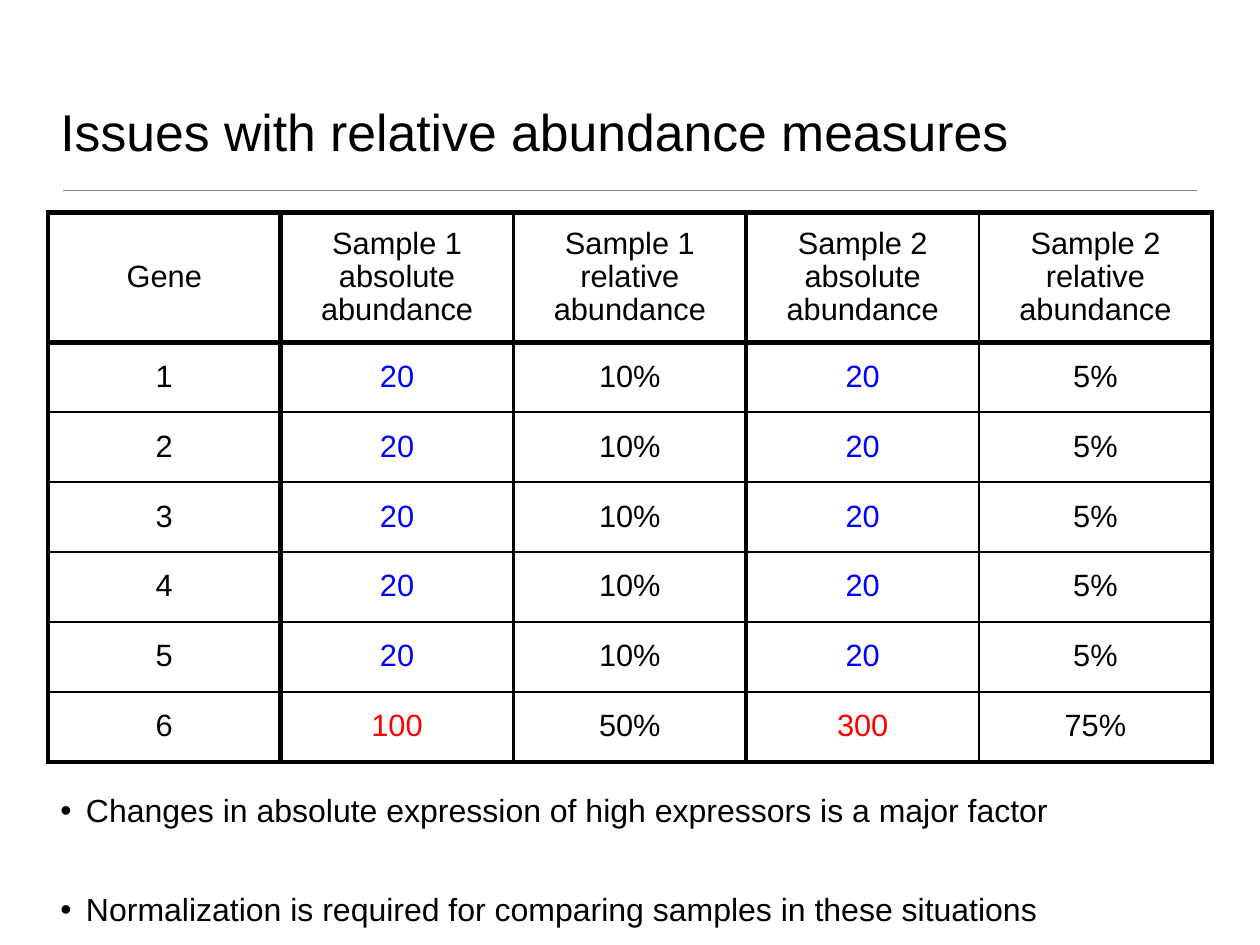
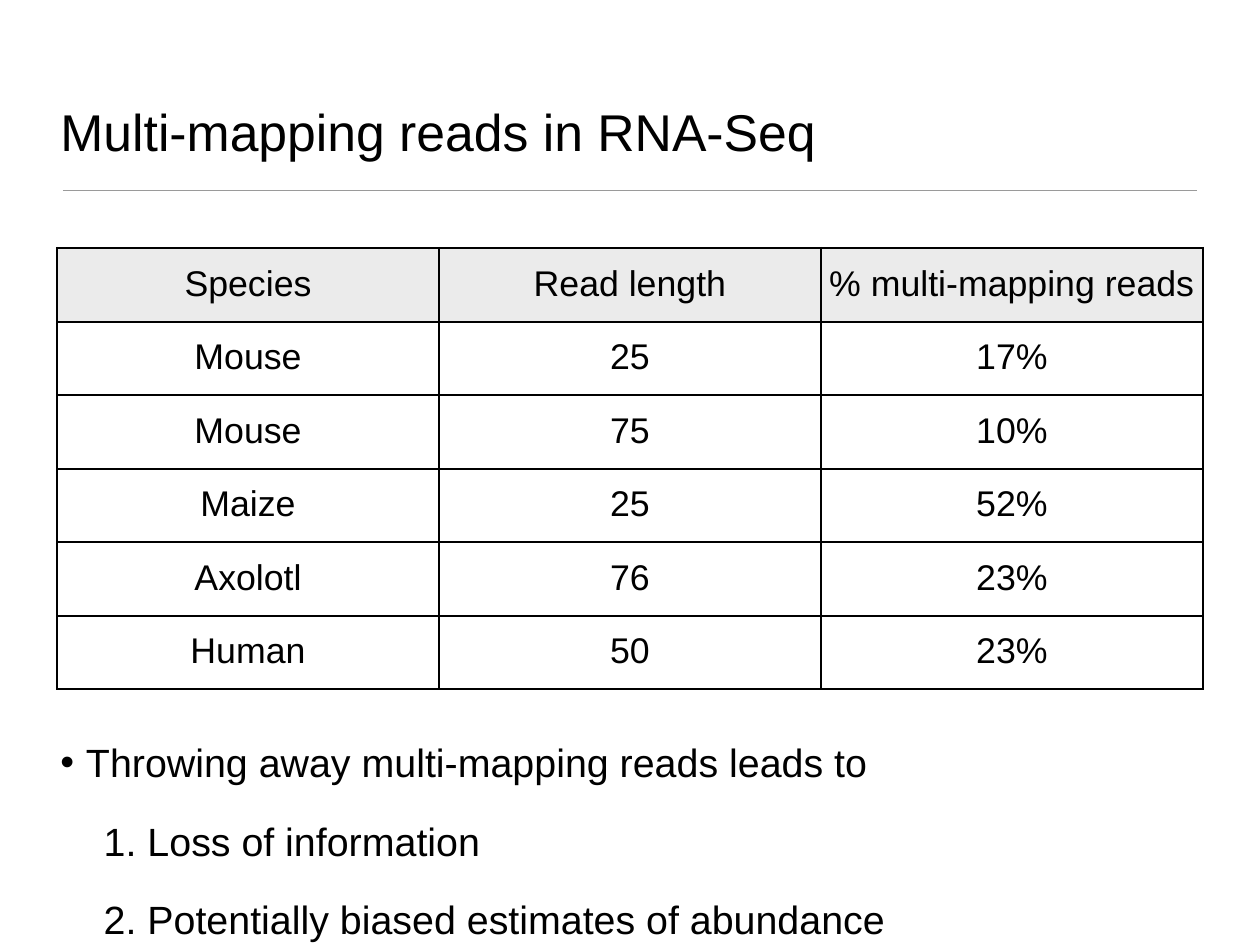
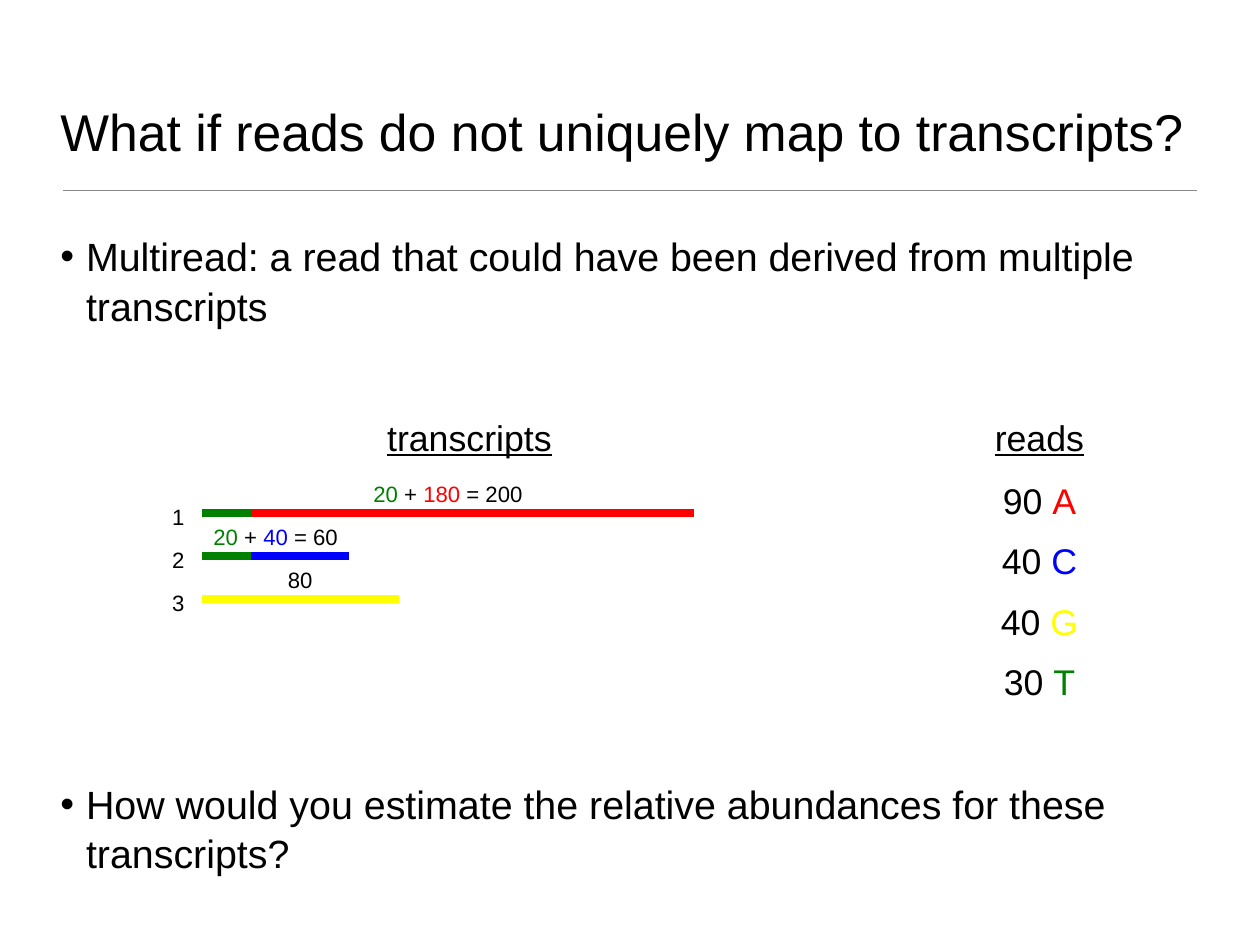
"""Build three slides on read mapping and relative abundance in RNA-Seq."""
from dataclasses import dataclass, field
from typing import NamedTuple

from lxml import etree
from pptx import Presentation
from pptx.dml.color import RGBColor
from pptx.enum.shapes import MSO_CONNECTOR
from pptx.enum.text import MSO_ANCHOR, MSO_AUTO_SIZE, PP_ALIGN
from pptx.oxml.ns import qn
from pptx.util import Emu, Pt

STRAIGHT = MSO_CONNECTOR.STRAIGHT
TOP, MIDDLE, BOTTOM = MSO_ANCHOR.TOP, MSO_ANCHOR.MIDDLE, MSO_ANCHOR.BOTTOM
LEFT, CENTER = PP_ALIGN.LEFT, PP_ALIGN.CENTER
NO_AUTOFIT = MSO_AUTO_SIZE.NONE

GRID_COLUMNS, GRID_ROWS = 128, 96
GRID_UNIT = 101600
TITLE_ONLY = 5
FONT = "Arial"
BLACK, WHITE, RED, GREEN = "000000", "FFFFFF", "FF0000", "008000"
BLUE, YELLOW, HEADER_GREY = "0000FF", "FFFF00", "EBEBEB"
RULE_GREY, LIGHT_RULE_GREY = "888888", "9A9A9A"
TITLE_SIZE, HEADING_SIZE, LABEL_SIZE = 42, 29, 18
INSET = 0.54


class Box(NamedTuple):
    left: float
    top: float
    width: float
    height: float


class Run(NamedTuple):
    text: str
    colour: str = BLACK


class Segment(NamedTuple):
    length: int
    colour: str


class Bullet(NamedTuple):
    text: str
    space_before: int
    numbered: bool = False


@dataclass
class Grid:
    left: float
    top: float
    column_width: float
    row_heights: list[float]
    rows: list[list[str]]
    size: int
    vertical_lines: list[int]
    horizontal_lines: list[int]
    header_fill: str = WHITE
    text_colours: dict[str, str] = field(default_factory=dict)


TITLE_BOX = Box(5.6, 3.2, 116.7, 13.8)
RULE_LEFT, RULE_RIGHT, RULE_TOP = 6.4, 121.6, 19.35

ABUNDANCE = Grid(
    4.86, 21.6, 23.65, [13.2] + [7.1] * 6,
    [["Gene"] + [f"Sample {sample} {kind} abundance"
                 for sample in (1, 2) for kind in ("absolute", "relative")]]
    + [[str(gene), "20", "10%", "20", "5%"] for gene in range(1, 6)]
    + [["6", "100", "50%", "300", "75%"]],
    25, [4, 4, 2, 4, 2, 4], [4, 4, 2, 2, 2, 2, 2, 4],
    text_colours={"20": BLUE, "100": RED, "300": RED})

MULTI_MAPPING = Grid(
    5.8, 25.2, 38.8, [7.47] * 6,
    [["Species", "Read length", "% multi-mapping reads"],
     ["Mouse", "25", "17%"],
     ["Mouse", "75", "10%"],
     ["Maize", "25", "52%"],
     ["Axolotl", "76", "23%"],
     ["Human", "50", "23%"]],
    29, [2] * 4, [2] * 7, header_fill=HEADER_GREY)

TRANSCRIPTS = [[Segment(20, GREEN), Segment(180, RED)],
               [Segment(20, GREEN), Segment(40, BLUE)],
               [Segment(80, YELLOW)]]
TRANSCRIPT_LEFT, TRANSCRIPT_TOP, TRANSCRIPT_PITCH = 20.5, 52.1, 4.38
UNITS_PER_BASE = 0.25

READS = [("90 ", "A", RED), ("40 ", "C", BLUE),
         ("40 ", "G", YELLOW), ("30 ", "T", GREEN)]
HEADING_TOP, HEADING_HEIGHT = 41.4, 5.2
READ_TOP, READ_PITCH = 47.8, 6.12
TRANSCRIPTS_CENTER, READS_CENTER = 47.7, 105.6


def units(value: float) -> Emu:
    """Turn grid units into a length."""
    return Emu(round(value * GRID_UNIT))


def colour_of(value: str) -> RGBColor:
    """Turn a hex string into a colour."""
    return RGBColor.from_string(value)


def apply(target, formats: dict) -> None:
    """Set every attribute in a dict of format values."""
    for name, value in formats.items():
        setattr(target, name, value)


def add_run(paragraph, run: Run, size: int, underline: bool = False) -> None:
    """Add one formatted run to a paragraph."""
    piece = paragraph.add_run()
    piece.text = run.text
    apply(piece.font, {"name": FONT, "size": Pt(size), "underline": underline})
    piece.font.color.rgb = colour_of(run.colour)


def format_frame(frame, anchor, inset: float = 0) -> None:
    """Set wrapping, anchor and margins of a text frame."""
    apply(frame, {"word_wrap": True, "auto_size": NO_AUTOFIT, "vertical_anchor": anchor,
                  **{f"margin_{side}": units(inset)
                     for side in ("left", "top", "right", "bottom")}})


def add_frame(slide, box: Box, anchor, inset: float = 0):
    """Add a text box and return its frame."""
    frame = slide.shapes.add_textbox(*map(units, box)).text_frame
    format_frame(frame, anchor, inset)
    return frame


def add_label(slide, box: Box, runs: list[Run], size: int, underline: bool = False) -> None:
    """Add centred text resting on the bottom of a box."""
    paragraph = add_frame(slide, box, BOTTOM).paragraphs[0]
    paragraph.alignment = CENTER
    for run in runs:
        add_run(paragraph, run, size, underline)


def add_line(slide, left: float, right: float, top: float, colour: str, width: int) -> None:
    """Add a horizontal line without a shadow."""
    line = slide.shapes.add_connector(
        STRAIGHT, units(left), units(top), units(right), units(top))
    line.line.color.rgb = colour_of(colour)
    line.line.width = Pt(width)
    etree.SubElement(line._element.spPr, qn("a:effectLst"))


def add_slide(presentation, title: str, rule_colour: str = RULE_GREY):
    """Add a slide with its title and rule."""
    slide = presentation.slides.add_slide(presentation.slide_layouts[TITLE_ONLY])
    shape = slide.shapes.title
    apply(shape, {name: units(value) for name, value in TITLE_BOX._asdict().items()})
    format_frame(shape.text_frame, BOTTOM, INSET)
    paragraph = shape.text_frame.paragraphs[0]
    paragraph.alignment = LEFT
    add_run(paragraph, Run(title), TITLE_SIZE)
    add_line(slide, RULE_LEFT, RULE_RIGHT, RULE_TOP, rule_colour, 1)
    return slide


def add_bullets(slide, box: Box, bullets: list[Bullet], size: int) -> None:
    """Add bulleted and numbered paragraphs."""
    frame = add_frame(slide, box, TOP, INSET)
    for index, bullet in enumerate(bullets):
        paragraph = frame.add_paragraph() if index else frame.paragraphs[0]
        apply(paragraph, {"alignment": LEFT, "level": int(bullet.numbered),
                          "line_spacing": 1.04, "space_before": Pt(bullet.space_before)})
        add_run(paragraph, Run(bullet.text), size)
        properties = paragraph._p.get_or_add_pPr()
        properties.set("marL", str(units(7.0 if bullet.numbered else 2.6)))
        properties.set("indent", str(units(-2.6)))
        bullet_colour = etree.SubElement(properties, qn("a:buClr"))
        etree.SubElement(bullet_colour, qn("a:srgbClr"), val=BLACK)
        etree.SubElement(properties, qn("a:buFont"), typeface=FONT)
        if bullet.numbered:
            etree.SubElement(properties, qn("a:buAutoNum"), type="arabicPeriod")
        else:
            etree.SubElement(properties, qn("a:buChar"), char="•")


def set_borders(cell, widths: dict[str, int]) -> None:
    """Give a cell solid black borders, listed left, right, top, bottom."""
    properties = cell._tc.get_or_add_tcPr()
    for index, (side, width) in enumerate(widths.items()):
        border = etree.Element(qn(f"a:ln{side}"), w=str(Pt(width)))
        fill = etree.SubElement(border, qn("a:solidFill"))
        etree.SubElement(fill, qn("a:srgbClr"), val=BLACK)
        properties.insert(index, border)


def add_grid(slide, grid: Grid) -> None:
    """Add a table with ruled cells."""
    column_count = len(grid.rows[0])
    box = Box(grid.left, grid.top, grid.column_width * column_count, sum(grid.row_heights))
    table = slide.shapes.add_table(len(grid.rows), column_count, *map(units, box)).table
    apply(table, {"first_row": False, "horz_banding": False})
    for column in table.columns:
        column.width = units(grid.column_width)
    for row_index, texts in enumerate(grid.rows):
        table.rows[row_index].height = units(grid.row_heights[row_index])
        for column_index, text in enumerate(texts):
            cell = table.cell(row_index, column_index)
            apply(cell, {"vertical_anchor": MIDDLE,
                         **{f"margin_{side}": units(INSET)
                            for side in ("left", "top", "right", "bottom")}})
            cell.fill.solid()
            cell.fill.fore_color.rgb = colour_of(WHITE if row_index else grid.header_fill)
            paragraph = cell.text_frame.paragraphs[0]
            apply(paragraph, {"alignment": CENTER, "line_spacing": 0.96})
            add_run(paragraph, Run(text, grid.text_colours.get(text, BLACK)), grid.size)
            set_borders(cell, {"L": grid.vertical_lines[column_index],
                               "R": grid.vertical_lines[column_index + 1],
                               "T": grid.horizontal_lines[row_index],
                               "B": grid.horizontal_lines[row_index + 1]})


def length_runs(segments: list[Segment]) -> list[Run]:
    """Write the segment lengths as a coloured sum."""
    total = sum(segment.length for segment in segments)
    if len(segments) == 1:
        return [Run(str(total))]
    first, second = segments
    return [Run(f"{first.length} ", first.colour), Run("+ "),
            Run(f"{second.length} ", second.colour), Run(f"= {total}")]


def add_transcripts(slide) -> None:
    """Draw the numbered transcripts to scale."""
    for index, segments in enumerate(TRANSCRIPTS):
        top = TRANSCRIPT_TOP + index * TRANSCRIPT_PITCH
        right = TRANSCRIPT_LEFT
        for segment in segments:
            left, right = right, right + segment.length * UNITS_PER_BASE
            add_line(slide, left, right, top, segment.colour, 6)
        add_label(slide, Box(16.9, top - 1.9, 2.4, 3.6), [Run(str(index + 1))], LABEL_SIZE)
        add_label(slide, Box(TRANSCRIPT_LEFT, top - 3.2, right - TRANSCRIPT_LEFT, 2.6),
                  length_runs(segments), LABEL_SIZE)


def add_reads(slide) -> None:
    """List the read counts under the two headings."""
    for text, center in (("transcripts", TRANSCRIPTS_CENTER), ("reads", READS_CENTER)):
        add_label(slide, Box(center - 10, HEADING_TOP, 20, HEADING_HEIGHT),
                  [Run(text)], HEADING_SIZE, underline=True)
    for index, (count, base, colour) in enumerate(READS):
        add_label(slide, Box(READS_CENTER - 6, READ_TOP + index * READ_PITCH, 12, HEADING_HEIGHT),
                  [Run(count), Run(base, colour)], HEADING_SIZE)


def main() -> None:
    """Build and save the presentation."""
    presentation = Presentation()
    presentation.slide_width = units(GRID_COLUMNS)
    presentation.slide_height = units(GRID_ROWS)

    slide = add_slide(presentation, "Issues with relative abundance measures")
    add_grid(slide, ABUNDANCE)
    add_bullets(slide, Box(5.6, 79.65, 116.9, 14.85), [
        Bullet("Changes in absolute expression of high expressors is a major factor", 48),
        Bullet("Normalization is required for comparing samples in these situations", 48)], 26)

    slide = add_slide(presentation, "Multi-mapping reads in RNA-Seq", LIGHT_RULE_GREY)
    add_grid(slide, MULTI_MAPPING)
    add_bullets(slide, Box(5.6, 74.25, 117, 21.5), [
        Bullet("Throwing away multi-mapping reads leads to", 24),
        Bullet(" Loss of information", 24, numbered=True),
        Bullet(" Potentially biased estimates of abundance", 24, numbered=True)], 32)

    slide = add_slide(presentation, "What if reads do not uniquely map to transcripts?")
    add_bullets(slide, Box(5.6, 22.9, 116.7, 64.6), [
        Bullet("Multiread: a read that could have been derived from multiple transcripts", 48),
        Bullet("How would you estimate the relative abundances for these transcripts?", 365)], 32)
    add_transcripts(slide)
    add_reads(slide)

    presentation.save("out.pptx")


if __name__ == "__main__":
    main()
